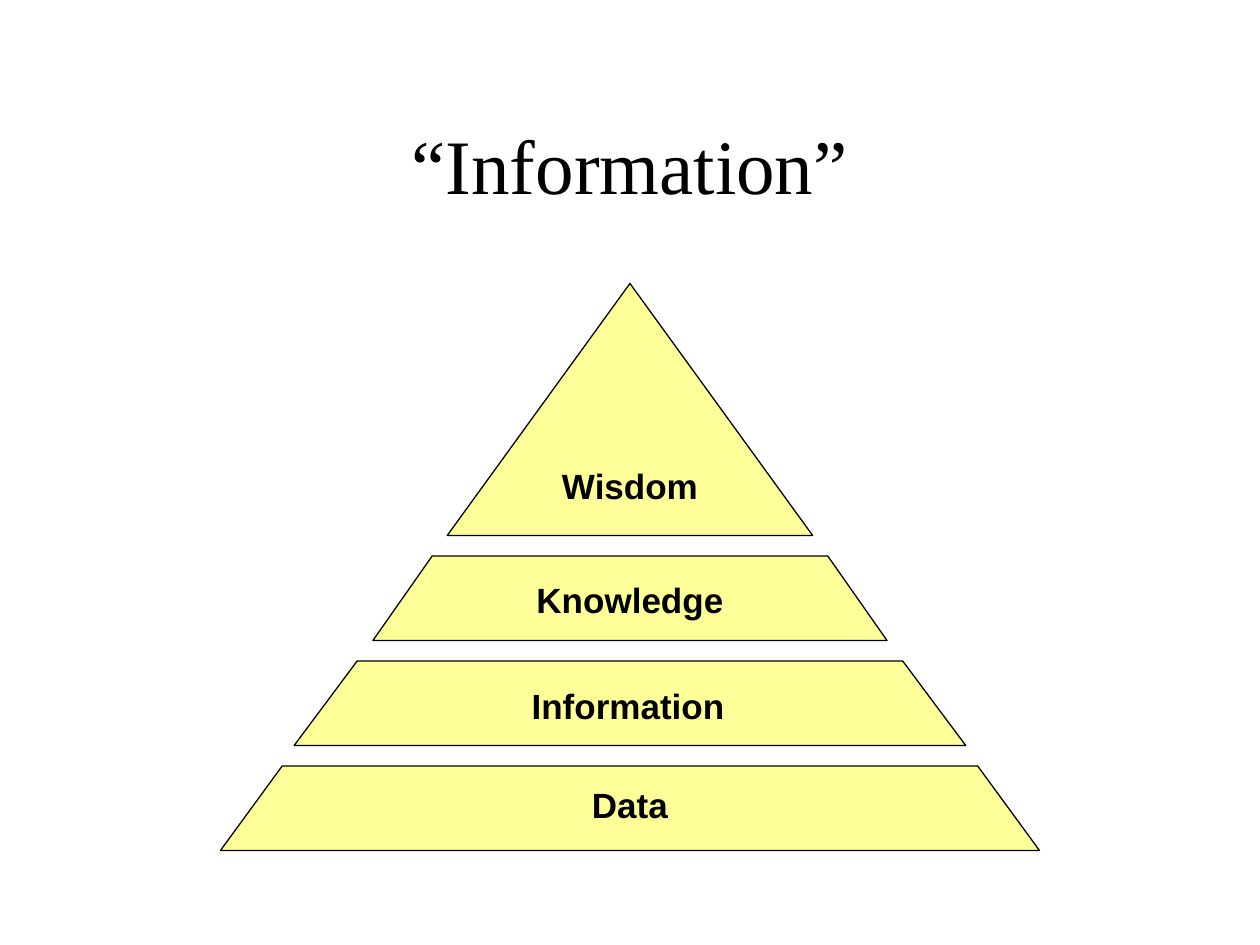
from pptx import Presentation
from pptx.dml.color import RGBColor
from pptx.enum.shapes import MSO_SHAPE as Preset
from pptx.enum.text import MSO_ANCHOR as Anchor, PP_ALIGN as Align
from pptx.util import Inches, Pt

INK = "000000"
YELLOW = "FFFF99"


def color(hex_code):
    """Turn a hex string into a colour."""
    return RGBColor.from_string(hex_code)


def add_label(slide, box, words, font, size, bold=False):
    """Place one centred line of text in a box given in inches."""
    label = slide.shapes.add_textbox(*map(Inches, box))
    frame = label.text_frame
    frame.word_wrap = True
    frame.vertical_anchor = Anchor.MIDDLE
    line = frame.paragraphs[0]
    line.alignment = Align.CENTER
    run = line.add_run()
    run.text = words
    run.font.name = font
    run.font.size = Pt(size)
    run.font.bold = bold
    run.font.color.rgb = color(INK)


def paint(layer):
    """Give a pyramid layer its fill and outline."""
    layer.shadow.inherit = False
    layer.fill.solid()
    layer.fill.fore_color.rgb = color(YELLOW)
    layer.line.color.rgb = color(INK)
    layer.line.width = Pt(0.75)


def add_band(slide, box, slant):
    """Draw a trapezoid whose sides lean inward by the slant."""
    left, top, width, height = box
    right, bottom = left + width, top + height
    corners = [(left, bottom), (left + slant, top), (right - slant, top), (right, bottom)]
    points = [(Inches(x), Inches(y)) for x, y in corners]
    outline = slide.shapes.build_freeform(*points[0])
    outline.add_line_segments(points[1:], close=True)
    paint(outline.convert_to_shape())


def add_peak(slide, box):
    """Draw the triangle at the top of the pyramid."""
    paint(slide.shapes.add_shape(Preset.ISOSCELES_TRIANGLE, *map(Inches, box)))


def add_pyramid(slide, box):
    """Stack the peak and three labelled bands in a box given in inches."""
    left, top, width, height = box
    center = left + width / 2
    band_height, pitch, label_height = 0.67, 2.5 / 3, 0.43
    bands = [
        ("Data", 6.5, 0.49, 0.09, 5),
        ("Information", 5.33, 0.5, 0.14, 4.985),
        ("Knowledge", 4.08, 0.47, 0.13, 5),
    ]
    for level, (words, base, slant, drop, middle) in enumerate(bands):
        band_top = top + height - band_height - level * pitch
        add_band(slide, (center - base / 2, band_top, base, band_height), slant)
        add_label(slide, (middle - 1.015, band_top + drop, 2.03, label_height),
                  words, "Arial", 20, True)
    add_peak(slide, (center - 1.45, top, 2.9, 2))
    add_label(slide, (center - 0.75, top + 1.39, 1.5, label_height),
              "Wisdom", "Arial", 20, True)


def main():
    """Build and save the slide."""
    deck = Presentation()
    deck.slide_width, deck.slide_height = Inches(10), Inches(7.5)
    slide = deck.slides.add_slide(deck.slide_layouts[6])
    add_pyramid(slide, (1.75, 2.25, 6.5, 4.5))
    add_label(slide, (0.75, 0.67, 8.5, 1.25), "“Information”", "Times New Roman", 44)
    deck.save("out.pptx")


if __name__ == "__main__":
    main()
